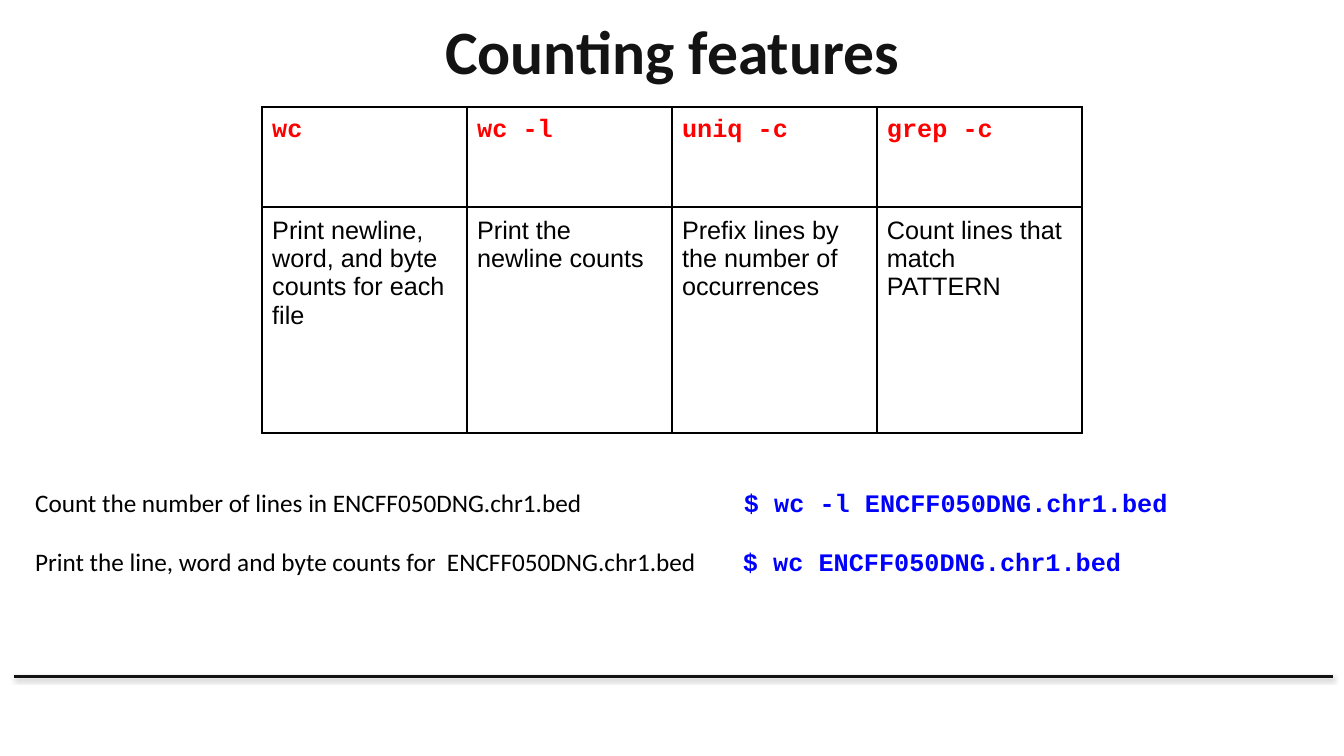
from dataclasses import dataclass

import lxml.etree
import pptx
import pptx.dml.color
import pptx.enum.shapes
import pptx.enum.text
import pptx.oxml.ns
import pptx.util

Inches = pptx.util.Inches
Pt = pptx.util.Pt
Color = pptx.dml.color.RGBColor
Align = pptx.enum.text.PP_ALIGN
Anchor = pptx.enum.text.MSO_ANCHOR
qn = pptx.oxml.ns.qn

INK = Color(0x14, 0x13, 0x13)
BLACK = Color(0x00, 0x00, 0x00)
RED = Color(0xFF, 0x00, 0x00)
BLUE = Color(0x00, 0x00, 0xFF)
CODE = "Courier New"
PAD = Inches(0.1)


@dataclass
class Tool:
    name: str
    use: str


@dataclass
class Task:
    goal: str
    code: str
    left: float


TOOLS = [
    Tool("wc", "Print newline, word, and byte counts for each file"),
    Tool("wc -l", "Print the newline counts"),
    Tool("uniq -c", "Prefix lines by the number of occurrences"),
    Tool("grep -c", "Count lines that match PATTERN"),
]
TASKS = [
    Task("Count the number of lines in ENCFF050DNG.chr1.bed",
         "$ wc -l ENCFF050DNG.chr1.bed", 7.28),
    Task("Print the line, word and byte counts for  ENCFF050DNG.chr1.bed",
         "$ wc ENCFF050DNG.chr1.bed", 7.27),
]


def write(frame, text: str, *, font: str = "Calibri", size: float = 18,
          color: Color = BLACK, bold: bool = False, align=Align.LEFT) -> None:
    para = frame.paragraphs[0]
    para.alignment = align
    run = para.add_run()
    run.text = text
    run.font.name = font
    run.font.size = Pt(size)
    run.font.bold = bold
    run.font.color.rgb = color


def add_node(root, tag: str, **attrs):
    return lxml.etree.SubElement(root, qn(tag), attrs)


def add_rule(slide) -> None:
    rule = slide.shapes.add_connector(
        pptx.enum.shapes.MSO_CONNECTOR.STRAIGHT,
        Inches(0.14), Inches(6.71), Inches(13.22), Inches(6.71))
    rule.line.color.rgb = INK
    rule.line.width = Pt(2)
    effects = add_node(rule._element.spPr, "a:effectLst")
    shadow = add_node(effects, "a:outerShdw", blurRad=str(Pt(3.1)),
                      dist=str(Pt(1.6)), dir="5400000", rotWithShape="0")
    tint = add_node(shadow, "a:srgbClr", val=str(BLACK))
    add_node(tint, "a:alpha", val="38000")


def add_title(slide, text: str) -> None:
    title = slide.shapes.title
    title.left, title.top = Inches(0.67), Inches(0.01)
    title.width, title.height = Inches(12), Inches(0.96)
    title.text_frame.vertical_anchor = Anchor.MIDDLE
    write(title.text_frame, text, size=44, color=INK, bold=True,
          align=Align.CENTER)


def style_cell(cell) -> None:
    cell.margin_left = cell.margin_right = PAD
    cell.margin_top = cell.margin_bottom = PAD
    props = cell._tc.get_or_add_tcPr()
    for side in "LRTB":
        edge = add_node(props, f"a:ln{side}", w=str(Pt(1.5)))
        fill = add_node(edge, "a:solidFill")
        add_node(fill, "a:srgbClr", val=str(BLACK))
    cell.fill.background()


def add_grid(slide, tools: list[Tool]) -> None:
    grid = slide.shapes.add_table(
        2, len(tools), Inches(2.6), Inches(1.06),
        Inches(8.13), Inches(3.24)).table
    grid.first_row = grid.horz_banding = False
    grid.rows[0].height = Inches(0.99)
    grid.rows[1].height = Inches(2.25)
    for col, tool in enumerate(tools):
        head, body = grid.cell(0, col), grid.cell(1, col)
        style_cell(head)
        style_cell(body)
        write(head.text_frame, tool.name, font=CODE, color=RED, bold=True)
        write(body.text_frame, tool.use, font="Arial")


def add_box(slide, left: float, top: float, width: float):
    box = slide.shapes.add_textbox(
        Inches(left), Inches(top), Inches(width), Inches(0.57))
    frame = box.text_frame
    frame.word_wrap = True
    frame.margin_left = frame.margin_right = PAD
    frame.margin_top = frame.margin_bottom = PAD
    return frame


def add_task(slide, task: Task, top: float) -> None:
    write(add_box(slide, 0.25, top, 7), task.goal)
    write(add_box(slide, task.left, top, 6.05), task.code,
          font=CODE, color=BLUE, bold=True)


def main() -> None:
    deck = pptx.Presentation()
    deck.slide_width = Inches(13.33)
    deck.slide_height = Inches(7.5)
    slide = deck.slides.add_slide(deck.slide_layouts.get_by_name("Title Only"))
    add_rule(slide)
    add_title(slide, "Counting features")
    add_grid(slide, TOOLS)
    for row, task in enumerate(TASKS):
        add_task(slide, task, 4.73 + 0.59 * row)
    deck.save("out.pptx")


if __name__ == "__main__":
    main()
